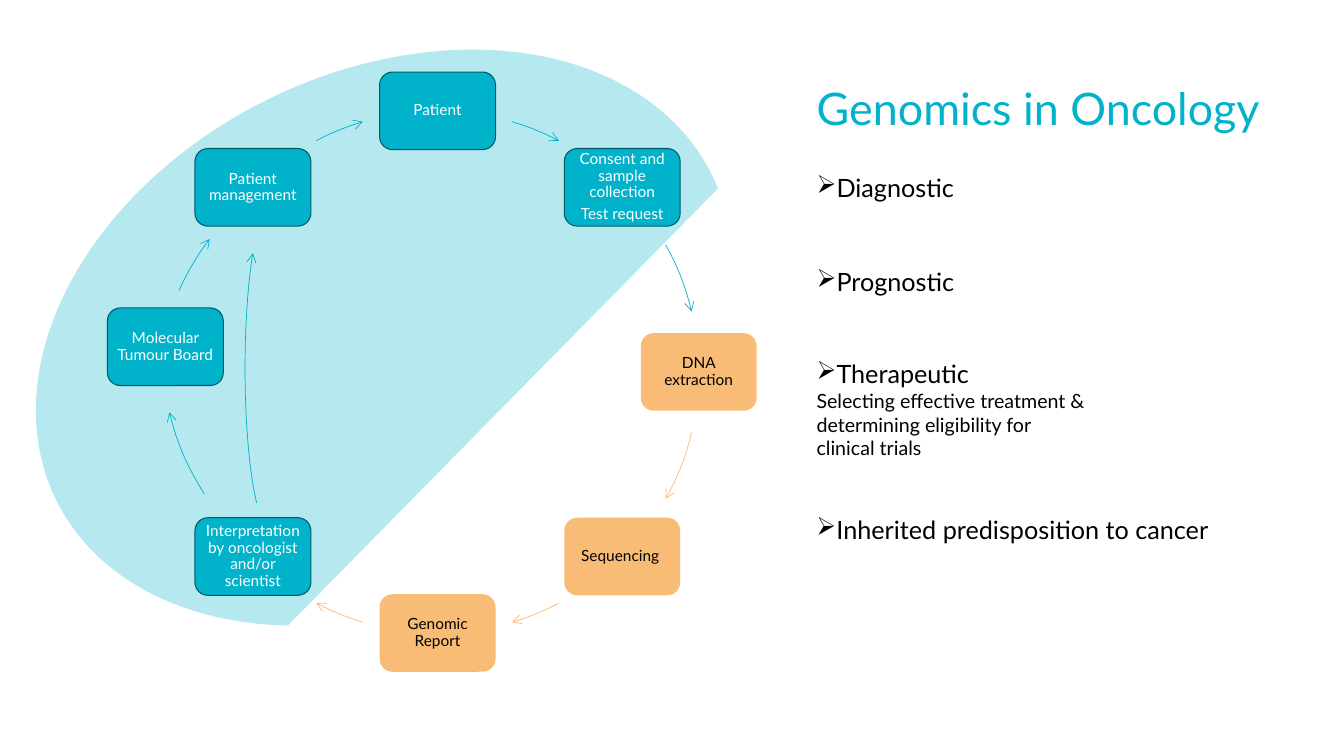
from math import cos, radians, sin

from lxml import etree
from pptx import Presentation
from pptx import util as u
from pptx.dml.color import RGBColor
from pptx.enum import shapes, text
from pptx.oxml import ns

TITLE = "Genomics in Oncology"
FONT = "Lato"
TEAL, ORANGE, EDGE = "00B2CA", "F9BC76", "005965"
WHITE, BLACK = "FFFFFF", "000000"

STEPS = [
    (["Patient"], TEAL, (0, 0)),
    (["Consent and sample collection", "Test request"], TEAL, (0, 0)),
    (["DNA extraction"], ORANGE, (0, 0)),
    (["Sequencing "], ORANGE, (0, 0)),
    (["Genomic Report"], ORANGE, (0, 0)),
    (["Interpretation by oncologist and/or scientist"], TEAL, (0, 0)),
    (["Molecular Tumour Board"], TEAL, (-0.11, -0.25)),
    (["Patient management"], TEAL, (0, 0)),
]
ARROWS = [
    (286.6, 297.7, TEAL, (0, 0)),
    (330.9, 346.6, TEAL, (0, 0)),
    (13.4, 29.1, ORANGE, (0, 0)),
    (62.3, 73.4, ORANGE, (0, 0)),
    (106.6, 117.7, ORANGE, (0, 0)),
    (147, 166.6, TEAL, (-0.14, -0.2)),
    (204.1, 217.3, TEAL, (-0.2, 0.25)),
    (242.3, 253.4, TEAL, (0, 0)),
]
USES = [
    (1.66, 2.91, 0.4, "Diagnostic", ""),
    (2.59, 2.91, 0.4, "Prognostic", ""),
    (3.51, 2.91, 1.11, "Therapeutic",
     "Selecting effective treatment & determining eligibility for clinical trials"),
    (5.05, 4.57, 0.4, "Inherited predisposition to cancer", ""),
]
CENTRE_X, CENTRE_Y, RADIUS = 4.34, 3.69, 2.59
BOX_WIDTH, BOX_HEIGHT = 1.15, 0.77
LIST_LEFT = 8
DEGREE = 0.6


def colour(value):
    return RGBColor.from_string(value)


def inches(*values):
    return [u.Inches(value) for value in values]


def apply(target, values):
    for name, value in values.items():
        setattr(target, name, value)


def add_element(parent, tag, **attributes):
    return etree.SubElement(parent, ns.qn(tag), attributes)


def add_shape(slide, kind, box, fill=None, line=None, width=0.75):
    shape = slide.shapes.add_shape(kind, *inches(*box))
    shape.shadow.inherit = False
    for paint, value in ((shape.fill, fill), (shape.line.fill, line)):
        if value:
            paint.solid()
            paint.fore_color.rgb = colour(value)
        else:
            paint.background()
    if line:
        shape.line.width = u.Pt(width)
    return shape


def write(paragraph, words, size, ink):
    run = paragraph.add_run()
    run.text = words
    apply(run.font, {"name": FONT, "size": u.Pt(size)})
    run.font.color.rgb = colour(ink)


def add_sector(slide):
    sector = add_shape(slide, shapes.MSO_SHAPE.CHORD, (1.18, -0.28, 5.26, 7.26), TEAL)
    sector.rotation = 63.5
    sector.adjustments[0] = 45 * DEGREE
    sector.adjustments[1] = 272.42 * DEGREE
    tint = sector.fill._xPr.find(".//" + ns.qn("a:srgbClr"))
    add_element(tint, "a:alpha", val="29000")


def add_arrow(slide, box, start, end, ink, rotation=0):
    arrow = add_shape(slide, shapes.MSO_SHAPE.ARC, box, line=ink, width=0.5)
    arrow.rotation = rotation
    arrow.adjustments[0] = start * DEGREE
    arrow.adjustments[1] = end * DEGREE
    add_element(arrow.line._get_or_add_ln(), "a:tailEnd", type="arrow")


def add_step(slide, index, lines, fill, shift):
    angle = radians(index * 360 / len(STEPS) - 90)
    left = CENTRE_X + RADIUS * cos(angle) - BOX_WIDTH / 2 + shift[0]
    top = CENTRE_Y + RADIUS * sin(angle) - BOX_HEIGHT / 2 + shift[1]
    teal = fill == TEAL
    step = add_shape(slide, shapes.MSO_SHAPE.ROUNDED_RECTANGLE,
                     (left, top, BOX_WIDTH, BOX_HEIGHT), fill, EDGE if teal else None)
    frame = step.text_frame
    apply(frame, {"word_wrap": True, "vertical_anchor": text.MSO_ANCHOR.MIDDLE})
    apply(frame, {"margin_" + side: u.Inches(0.04)
                  for side in ("left", "right", "top", "bottom")})
    for number, words in enumerate(lines):
        paragraph = frame.add_paragraph() if number else frame.paragraphs[0]
        apply(paragraph, {"alignment": text.PP_ALIGN.CENTER, "line_spacing": 0.9,
                          "space_after": u.Pt(3.85)})
        write(paragraph, words, 11, WHITE if teal else BLACK)


def add_use(slide, top, width, height, heading, detail):
    frame = slide.shapes.add_textbox(*inches(LIST_LEFT, top, width, height)).text_frame
    apply(frame, {"word_wrap": True, "auto_size": text.MSO_AUTO_SIZE.SHAPE_TO_FIT_TEXT})
    paragraph = frame.paragraphs[0]
    properties = paragraph._p.get_or_add_pPr()
    apply(properties, {"marL": u.Inches(0.31), "indent": -u.Inches(0.31)})
    add_element(properties, "a:buChar", char="➢")
    write(paragraph, heading, 18, BLACK)
    if detail:
        write(frame.add_paragraph(), detail, 14, BLACK)


def add_title(slide):
    title = slide.shapes.title
    apply(title, dict(zip(("left", "top", "width", "height"),
                          inches(LIST_LEFT, 0.58, 4.94, 1.04))))
    apply(title.text_frame, {"word_wrap": True, "auto_size": text.MSO_AUTO_SIZE.NONE,
                             "vertical_anchor": text.MSO_ANCHOR.MIDDLE})
    paragraph = title.text_frame.paragraphs[0]
    apply(paragraph, {"alignment": text.PP_ALIGN.LEFT, "line_spacing": 0.9})
    write(paragraph, TITLE, 32, TEAL)


def main():
    presentation = Presentation()
    apply(presentation, {"slide_width": u.Inches(13.33), "slide_height": u.Inches(7.5)})
    slide = presentation.slides.add_slide(presentation.slide_layouts[5])
    add_title(slide)
    add_sector(slide)
    for index, step in enumerate(STEPS):
        add_step(slide, index, *step)
    for start, end, ink, (across, down) in ARROWS:
        ring = (CENTRE_X - RADIUS + across, CENTRE_Y - RADIUS + down,
                2 * RADIUS, 2 * RADIUS)
        add_arrow(slide, ring, start, end, ink)
    add_arrow(slide, (2.43, 2.06, 0.51, 3.19), 275.98, 81.16, TEAL, 180)
    for use in USES:
        add_use(slide, *use)
    presentation.save("out.pptx")


if __name__ == "__main__":
    main()
